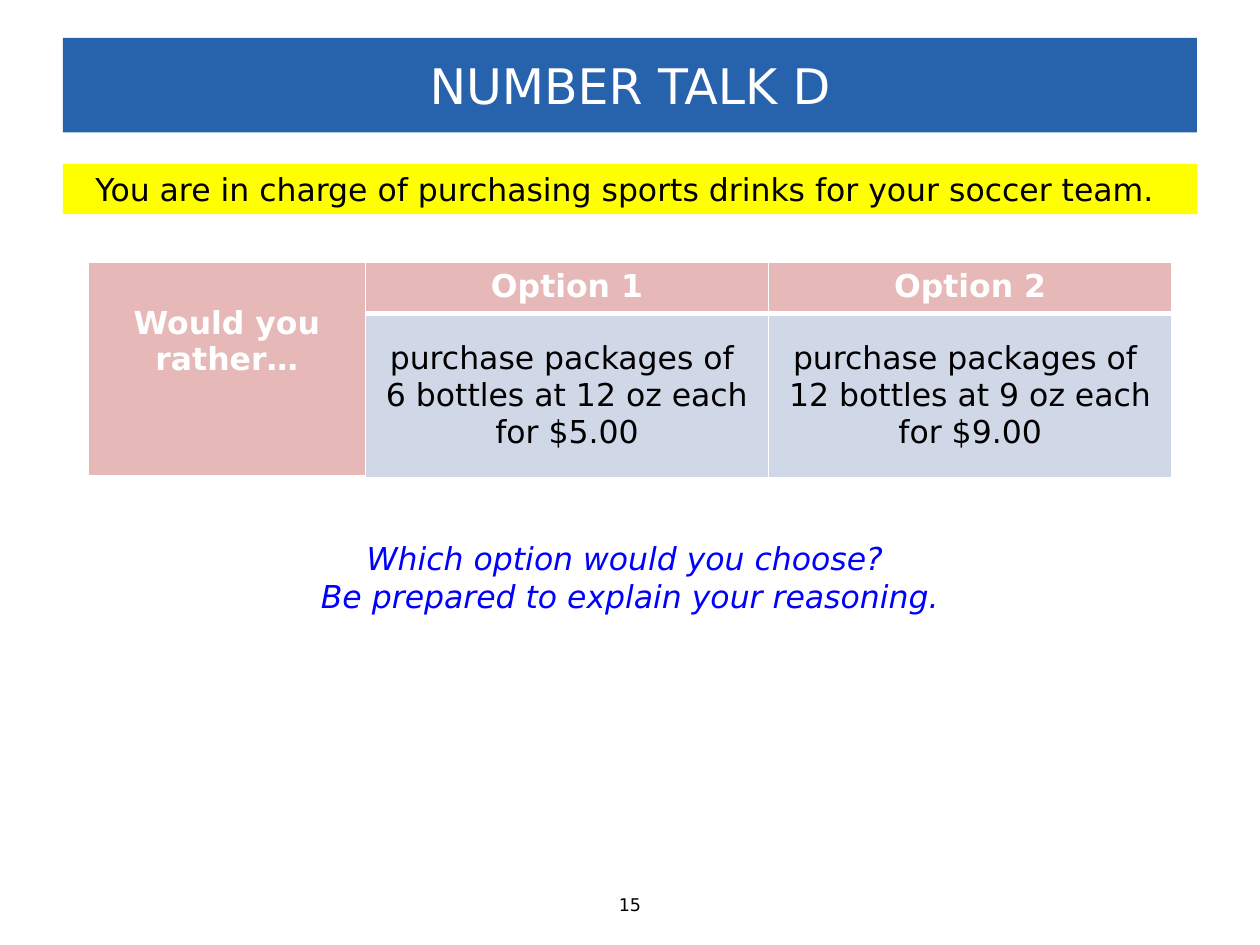
from lxml import etree
from pptx import Presentation
from pptx.dml.color import RGBColor
from pptx.enum.shapes import MSO_SHAPE
from pptx.enum.text import MSO_ANCHOR, PP_ALIGN
from pptx.oxml.ns import qn
from pptx.util import Inches, Pt

RECTANGLE = MSO_SHAPE.RECTANGLE
CENTER = PP_ALIGN.CENTER
TOP, MIDDLE = MSO_ANCHOR.TOP, MSO_ANCHOR.MIDDLE

WHITE, BLACK, BLUE, YELLOW = "FFFFFF", "000000", "2762AD", "FFFF00"
PINK, PALE_BLUE, QUESTION_BLUE = "E6B9B8", "D0D8E8", "0000FF"


def color(hex_value):
    """Turn a hex string into a colour."""
    return RGBColor.from_string(hex_value)


class NumberTalkSlide:
    """Draw on one slide with a grid of 100 columns and 75 rows."""

    font_name = "DejaVu Sans"
    columns, rows = 100, 75

    def __init__(self, deck):
        """Add a blank slide to the deck."""
        self.slide = deck.slides.add_slide(deck.slide_layouts[6])
        self.column = deck.slide_width / self.columns
        self.row = deck.slide_height / self.rows

    def place(self, left, top, width, height):
        """Convert grid units to slide lengths."""
        return (round(left * self.column), round(top * self.row),
                round(width * self.column), round(height * self.row))

    def set_lines(self, frame, lines, ink, size=18, **formats):
        """Set centred paragraphs in one style."""
        frame.text = "\n".join(lines)
        values = {"name": self.font_name, "size": Pt(size), **formats}
        for paragraph in frame.paragraphs:
            paragraph.alignment = CENTER
            paragraph.font.color.rgb = color(ink)
            for key, value in values.items():
                setattr(paragraph.font, key, value)

    def band(self, area, fill, line, ink, size=18, anchor=MIDDLE):
        """Add a filled band with a line of text."""
        band = self.slide.shapes.add_shape(RECTANGLE, *self.place(*area))
        band.shadow.inherit = False
        band.fill.solid()
        band.fill.fore_color.rgb = color(fill)
        band.line.fill.background()
        band.text_frame.vertical_anchor = anchor
        self.set_lines(band.text_frame, [line], ink, size)

    def text(self, area, lines, ink, size=18, wrap=True, **formats):
        """Add a text box."""
        box = self.slide.shapes.add_textbox(*self.place(*area))
        box.text_frame.word_wrap = wrap
        self.set_lines(box.text_frame, lines, ink, size, **formats)

    def table(self, area, widths, heights):
        """Add a table with the given column widths and row heights."""
        shape = self.slide.shapes.add_table(len(heights), len(widths), *self.place(*area))
        for table_column, width in zip(shape.table.columns, widths):
            table_column.width = round(width * self.column)
        for table_row, height in zip(shape.table.rows, heights):
            table_row.height = round(height * self.row)
        return shape.table

    def cell(self, cell, fill, bottom):
        """Give a cell its white borders and fill."""
        properties = cell._tc.get_or_add_tcPr()
        for side, points in {"L": 1, "R": 1, "T": 1, "B": bottom}.items():
            border = etree.SubElement(properties, qn(f"a:ln{side}"), w=str(Pt(points)))
            solid = etree.SubElement(border, qn("a:solidFill"))
            etree.SubElement(solid, qn("a:srgbClr"), val=WHITE)
        cell.fill.solid()
        cell.fill.fore_color.rgb = color(fill)


def main():
    """Build the number talk slide."""
    deck = Presentation()
    deck.slide_width, deck.slide_height = Inches(10), Inches(7.5)
    talk = NumberTalkSlide(deck)

    talk.text((47.8, 70.5, 4.4, 2.7), ["15"], BLACK, size=10, wrap=False)
    talk.band((5, 3, 90, 7.5), BLUE, "NUMBER TALK D", WHITE, size=28)
    talk.text((24.4, 42.3, 51.2, 7.1),
              ["Which option would you choose? ", "Be prepared to explain your reasoning."],
              QUESTION_BLUE, italic=True)

    choices = talk.table((7, 20.8, 86, 17.1), [22, 32, 32], [4.1, 13])
    for position in (0, 1):
        talk.cell(choices.cell(position, 0), PINK, 3)
    prompt = choices.cell(0, 0)
    prompt.merge(choices.cell(1, 0))
    prompt.margin_top = Inches(0.34)
    talk.set_lines(prompt.text_frame, ["Would you rather…"], WHITE, bold=True)

    offers = ["6 bottles at 12 oz each for $5.00", "12 bottles at 9 oz each for $9.00"]
    for number, offer in enumerate(offers, start=1):
        heading, detail = choices.cell(0, number), choices.cell(1, number)
        talk.cell(heading, PINK, 3)
        talk.set_lines(heading.text_frame, [f"Option {number}"], WHITE, bold=True)
        talk.cell(detail, PALE_BLUE, 1)
        detail.vertical_anchor = MIDDLE
        talk.set_lines(detail.text_frame, ["purchase packages of ", offer], BLACK, bold=False)

    talk.band((5, 13, 90, 4), YELLOW,
              "You are in charge of purchasing sports drinks for your soccer team. ",
              BLACK, anchor=TOP)
    deck.save("out.pptx")


if __name__ == "__main__":
    main()
